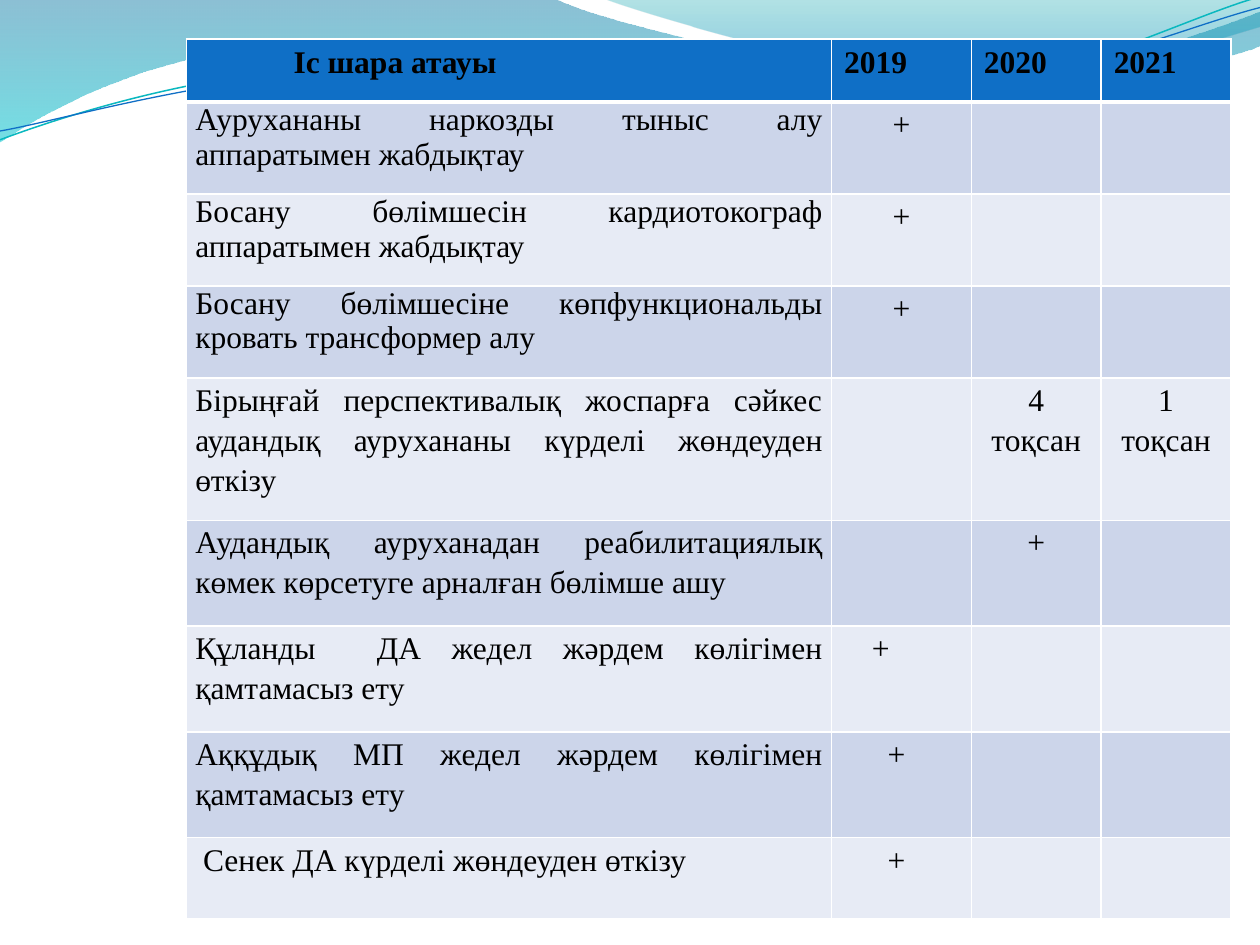
from lxml import etree
from pptx import Presentation
from pptx.dml.color import RGBColor
from pptx.enum.text import PP_ALIGN
from pptx.oxml.ns import qn
from pptx.util import Inches, Pt

LEFT, CENTER, JUSTIFY = PP_ALIGN.LEFT, PP_ALIGN.CENTER, PP_ALIGN.JUSTIFY
BLACK = RGBColor(0x00, 0x00, 0x00)
WHITE = RGBColor(0xFF, 0xFF, 0xFF)
BLUE = RGBColor(0x0F, 0x6F, 0xC6)
TEAL = RGBColor(0x0A, 0xB8, 0xBF)
DARK_BAND = RGBColor(0xCC, 0xD5, 0xEA)
LIGHT_BAND = RGBColor(0xE7, 0xEB, 0xF5)
WAVE_BLUE = RGBColor(0x00, 0x74, 0xA1)
WAVE_CYAN = RGBColor(0x00, 0xC6, 0xCF)
CREST_TEAL = RGBColor(0x00, 0xA1, 0xA9)
CREST_BLUE = RGBColor(0x00, 0x8B, 0xBF)

FONT = "Times New Roman"
SPACE = 0.0625  # width of one 18 pt space, in inches

# Outlines in inches: a pair is a straight step, six numbers a Bezier curve.
WAVE = [(0, 0), (4.4, -0.01), (4.76, 0.17, 6.64, 0.63, 7.58, 0.63),
        (8.53, 0.63, 9.58, 0.26, 10, 0.09), (10.01, 0.36),
        (9.83, 0.44, 8.7, 0.76, 7.46, 0.75), (6.22, 0.75, 3.82, 0.28, 2.57, 0.34),
        (1.29, 0.36, 0.46, 0.83, -0.01, 1.13), (0, 0)]
CREST = [(4.79, -0.01), (5.09, 0.11, 6.82, 0.62, 7.69, 0.65),
         (8.56, 0.69, 9.61, 0.32, 10, 0.21), (10, 0), (4.79, -0.01)]
TEAL_LINE = [(0, 1.11), (0.48, 0.93, 1.58, 0.57, 2.77, 0.52),
             (3.95, 0.47, 5.93, 0.89, 7.13, 0.8), (8.33, 0.71, 9.38, 0.15, 9.98, -0.02)]
BLUE_LINE = [(0, 1.04), (0.47, 0.96, 1.64, 0.61, 2.83, 0.56),
             (4.03, 0.51, 5.97, 0.84, 7.17, 0.75), (8.36, 0.67, 9.41, 0.21, 10, 0.06)]

COLUMN_WIDTHS = [5.12, 1.11, 1.03, 1.03]
HEADERS = ["Іс шара атауы", "2019", "2020", "2021"]
# Row height, line spacing, measure, marks by column: (text, alignment, indent in spaces)
MEASURES = [
    (0.73, 1.0, "Аурухананы наркозды тыныс алу аппаратымен жабдықтау", {1: ("+", CENTER, 0)}),
    (0.73, 1.0, "Босану бөлімшесін кардиотокограф аппаратымен жабдықтау", {1: ("+", CENTER, 0)}),
    (0.73, 1.0, "Босану бөлімшесіне көпфункциональды кровать трансформер алу",
     {1: ("+", CENTER, 0)}),
    (1.13, 1.15, "Бірыңғай перспективалық жоспарға сәйкес аудандық аурухананы "
     "күрделі жөндеуден өткізу", {2: ("4 тоқсан", CENTER, 0), 3: ("1\nтоқсан", CENTER, 0)}),
    (0.84, 1.15, "Аудандық ауруханадан реабилитациялық көмек көрсетуге арналған бөлімше ашу",
     {2: ("+", CENTER, 0)}),
    (0.84, 1.15, "Құланды  ДА жедел жәрдем көлігімен қамтамасыз ету", {1: ("+", JUSTIFY, 4)}),
    (0.84, 1.15, "Аққұдық МП жедел жәрдем көлігімен қамтамасыз ету", {1: ("+", JUSTIFY, 6)}),
    (0.64, 1.15, " Сенек ДА күрделі жөндеуден өткізу", {1: ("+", JUSTIFY, 6)}),
]


def add_outline(slide, outline, close):
    """Add a freeform through the end points, then bend its curved steps."""
    corners = [(Inches(step[-2]), Inches(step[-1])) for step in outline]
    builder = slide.shapes.build_freeform(*corners[0])
    builder.add_line_segments(corners[1:], close=close)
    shape = builder.convert_to_shape()
    shape.shadow.inherit = False
    segments = list(shape.element.iter(qn("a:lnTo")))
    for segment, step in zip(segments, outline[1:]):
        if len(step) == 6:
            bend_segment(shape, segment, step)
    return shape


def bend_segment(shape, segment, step):
    curve = etree.Element(qn("a:cubicBezTo"))
    for x, y in zip(step[::2], step[1::2]):
        point = etree.SubElement(curve, qn("a:pt"))
        point.set("x", str(Inches(x) - shape.left))
        point.set("y", str(Inches(y) - shape.top))
    segment.getparent().replace(segment, curve)


def add_gradient_wave(slide, outline, stops):
    """Add a filled wave; stops are (position, colour, opacity percent), top to bottom."""
    shape = add_outline(slide, outline, close=True)
    shape.line.fill.background()
    shape.fill.gradient()
    shape.fill.gradient_angle = 270
    for gradient_stop, (position, color, _) in zip(shape.fill.gradient_stops, stops):
        gradient_stop.position = position
        gradient_stop.color.rgb = color
    colors = shape.element.spPr.iter(qn("a:srgbClr"))
    for color_element, (_, _, opacity) in zip(colors, stops):
        etree.SubElement(color_element, qn("a:alpha")).set("val", str(opacity * 1000))


def add_wave_line(slide, outline, color, width):
    shape = add_outline(slide, outline, close=False)
    shape.fill.background()
    shape.line.color.rgb = color
    shape.line.width = Pt(width)


def write_cell(cell, text, alignment, spacing=None, bold=False):
    cell.text_frame.text = text
    for paragraph in cell.text_frame.paragraphs:
        paragraph.alignment = alignment
        paragraph.line_spacing = spacing
        for run in paragraph.runs:
            run.font.name = FONT
            run.font.size = Pt(18)
            run.font.bold = bold
            run.font.color.rgb = BLACK


def write_body_cell(cell, text, alignment, spacing, indent=0):
    write_cell(cell, text, alignment, spacing)
    cell.margin_left = Inches(0.07 + indent * SPACE)
    cell.margin_right = Inches(0.07)
    cell.margin_top = cell.margin_bottom = 0


def fill_row(row, color):
    for cell in row.cells:
        cell.fill.solid()
        cell.fill.fore_color.rgb = color


def set_borders(cell, bottom_width):
    properties = cell._tc.get_or_add_tcPr()
    for index, side in enumerate(["lnL", "lnR", "lnT", "lnB"]):
        border = etree.Element(qn("a:" + side))
        border.set("w", str(Pt(bottom_width if side == "lnB" else 1)))
        fill = etree.SubElement(border, qn("a:solidFill"))
        etree.SubElement(fill, qn("a:srgbClr")).set("val", str(WHITE))
        properties.insert(index, border)


def add_measures_table(slide):
    heights = [0.5] + [measure[0] for measure in MEASURES]
    table = slide.shapes.add_table(
        len(heights), len(COLUMN_WIDTHS), Inches(1.48), Inches(0.31),
        Inches(sum(COLUMN_WIDTHS)), Inches(sum(heights))).table
    for column, width in zip(table.columns, COLUMN_WIDTHS):
        column.width = Inches(width)
    for row, height in zip(table.rows, heights):
        row.height = Inches(height)

    fill_row(table.rows[0], BLUE)
    for column_index, header in enumerate(HEADERS):
        cell = table.cell(0, column_index)
        write_cell(cell, header, LEFT, bold=True)
        set_borders(cell, bottom_width=3)
    table.cell(0, 0).margin_left = Inches(0.1 + 12 * SPACE)

    for row_index, (_, spacing, measure, marks) in enumerate(MEASURES, start=1):
        fill_row(table.rows[row_index], DARK_BAND if row_index % 2 else LIGHT_BAND)
        write_body_cell(table.cell(row_index, 0), measure, JUSTIFY, spacing)
        for column_index, (text, alignment, indent) in marks.items():
            write_body_cell(table.cell(row_index, column_index), text, alignment, 1.15, indent)


def main():
    presentation = Presentation()
    presentation.slide_width = Inches(10)
    presentation.slide_height = Inches(7.5)
    slide = presentation.slides.add_slide(presentation.slide_layouts[6])
    add_gradient_wave(slide, WAVE, [(0, WAVE_BLUE, 45), (1, WAVE_CYAN, 55)])
    add_gradient_wave(slide, CREST, [(0, CREST_TEAL, 30), (0.8, CREST_BLUE, 45)])
    add_wave_line(slide, TEAL_LINE, TEAL, 0.85)
    add_wave_line(slide, BLUE_LINE, BLUE, 0.75)
    add_measures_table(slide)
    presentation.save("out.pptx")


if __name__ == "__main__":
    main()
